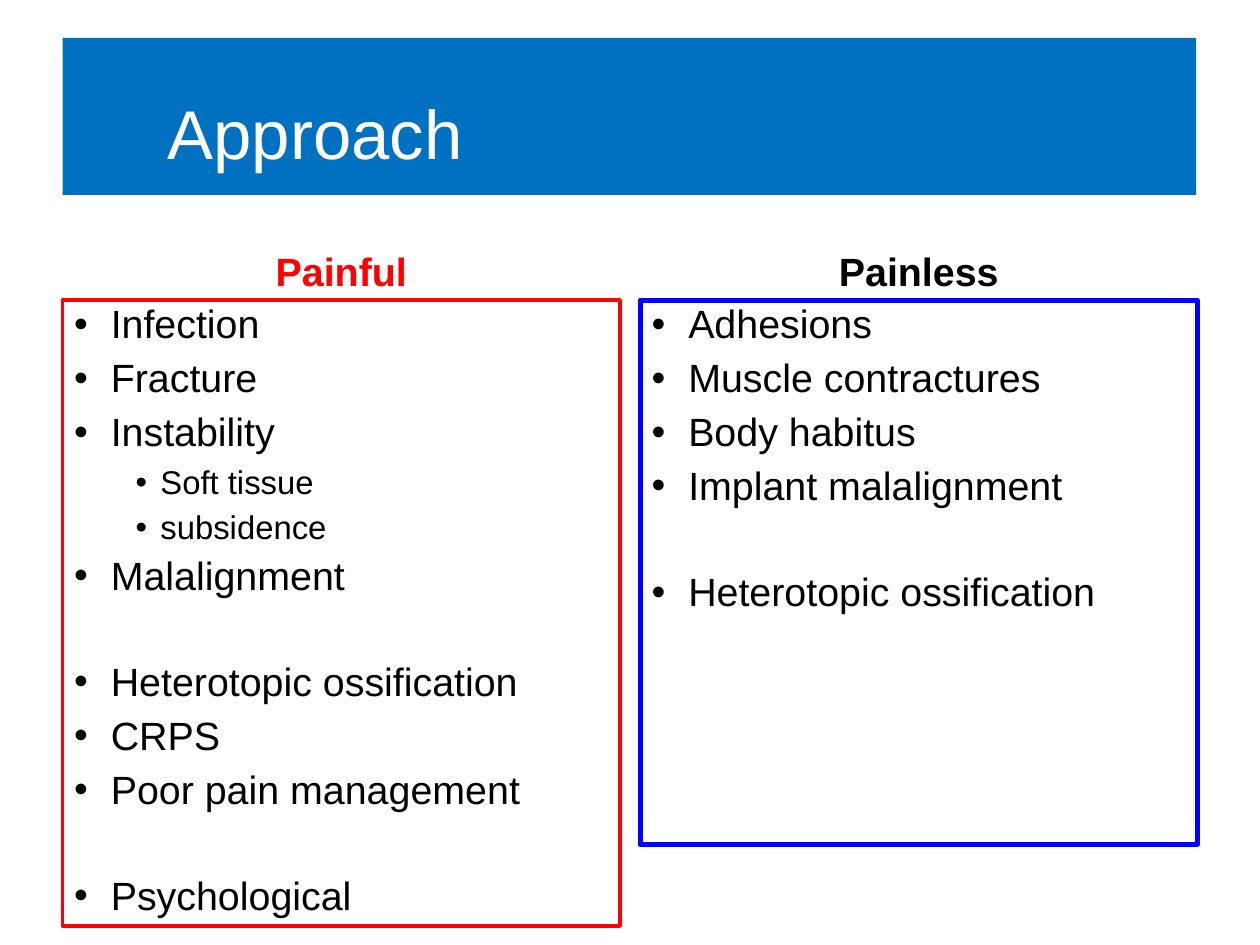
"""Build the slide comparing painful and painless causes."""
import pptx
import pptx.dml.color
import pptx.enum.shapes
import pptx.enum.text
import pptx.oxml.ns
import pptx.util
from lxml import etree
from pptx.util import Inches

COLORS = {"blue": "0070C0", "white": "FFFFFF", "black": "000000",
          "red": "FF0000", "frame_blue": "0000FF"}
ANCHOR = pptx.enum.text.MSO_ANCHOR
ALIGN = pptx.enum.text.PP_ALIGN
LEFT, RIGHT, COLUMN_WIDTH = 0.53, 5.42, 4.72
HEADING_TOP, HEADING_HEIGHT = 1.79, 0.75
LEVELS = [(24, 0.31, 0.31), (20, 0.73, 0.21)]
GROUP_GAP = 31.8

PAINFUL = [
    [("Infection", 0), ("Fracture", 0), ("Instability", 0),
     ("Soft tissue", 1), ("subsidence", 1), ("Malalignment", 0)],
    [("Heterotopic ossification", 0), ("CRPS", 0), ("Poor pain management", 0)],
    [("Psychological", 0)],
]
PAINLESS = [
    [("Adhesions", 0), ("Muscle contractures", 0), ("Body habitus", 0),
     ("Implant malalignment", 0)],
    [("Heterotopic ossification", 0)],
]


class Deck:
    """Hold the style and the current slide."""

    def __init__(self, slide):
        self.s = slide
        self.font = "Arial"

    def color(self, name):
        return pptx.dml.color.RGBColor.from_string(COLORS[name])

    def frame(self, sp, anchor, insets=(0.1, 0.04, 0.1, 0.04)):
        tf = sp.text_frame
        tf.word_wrap = True
        tf.auto_size = pptx.enum.text.MSO_AUTO_SIZE.NONE
        tf.vertical_anchor = anchor
        (tf.margin_left, tf.margin_top,
         tf.margin_right, tf.margin_bottom) = map(Inches, insets)
        return tf

    def fill_text(self, p, text, size, color, align=ALIGN.LEFT, bold=False):
        p.text = text
        p.alignment = align
        font = p.runs[0].font
        font.name, font.size, font.bold = self.font, pptx.util.Pt(size), bold
        font.color.rgb = self.color(color)

    def space(self, p, size):
        p.line_spacing = 0.9
        p.space_after = pptx.util.Pt(size * 0.29)

    def bullet(self, p, left, hanging):
        pPr = p._p.get_or_add_pPr()
        pPr.set("marL", str(Inches(left)))
        pPr.set("indent", str(-Inches(hanging)))
        qn = pptx.oxml.ns.qn
        etree.SubElement(pPr, qn("a:buFont")).set("typeface", self.font)
        etree.SubElement(pPr, qn("a:buChar")).set("char", "•")

    def title(self, text):
        sp = self.s.shapes.title
        sp.left, sp.top, sp.width, sp.height = map(Inches, (LEFT, 0.32, 9.6, 1.33))
        sp.fill.solid()
        sp.fill.fore_color.rgb = self.color("blue")
        tf = self.frame(sp, ANCHOR.MIDDLE, (0.89, 0.31, 0.79, 0.04))
        self.fill_text(tf.paragraphs[0], text, 42, "white")

    def heading(self, text, left, color):
        sp = self.s.shapes.add_textbox(
            *map(Inches, (left, HEADING_TOP, COLUMN_WIDTH, HEADING_HEIGHT)))
        p = self.frame(sp, ANCHOR.BOTTOM).paragraphs[0]
        self.fill_text(p, text, 24, color, ALIGN.CENTER, True)
        self.space(p, 24)

    def bullet_box(self, groups, left, height, color, line_width):
        sp = self.s.shapes.add_shape(
            pptx.enum.shapes.MSO_SHAPE.RECTANGLE,
            *map(Inches, (left, HEADING_TOP + HEADING_HEIGHT, COLUMN_WIDTH, height)))
        sp.shadow.inherit = False
        sp.fill.background()
        sp.line.color.rgb = self.color(color)
        sp.line.width = pptx.util.Pt(line_width)
        tf = self.frame(sp, ANCHOR.TOP)
        p = tf.paragraphs[0]
        for g, group in enumerate(groups):
            for i, (text, level) in enumerate(group):
                if g or i:
                    p = tf.add_paragraph()
                size, indent, hanging = LEVELS[level]
                p.level = level
                self.bullet(p, indent, hanging)
                self.fill_text(p, text, size, "black")
                self.space(p, size)
                if g and i == 0:
                    p.space_before = pptx.util.Pt(GROUP_GAP)


def main():
    prs = pptx.Presentation()
    prs.slide_width, prs.slide_height = Inches(10.67), Inches(8)
    deck = Deck(prs.slides.add_slide(prs.slide_layouts[5]))
    deck.title("Approach")
    deck.heading("Painful", LEFT, "red")
    deck.bullet_box(PAINFUL, LEFT, 5.3, "red", 2.25)
    deck.heading("Painless", RIGHT, "black")
    deck.bullet_box(PAINLESS, RIGHT, 4.61, "frame_blue", 3)
    prs.save("out.pptx")


if __name__ == "__main__":
    main()
